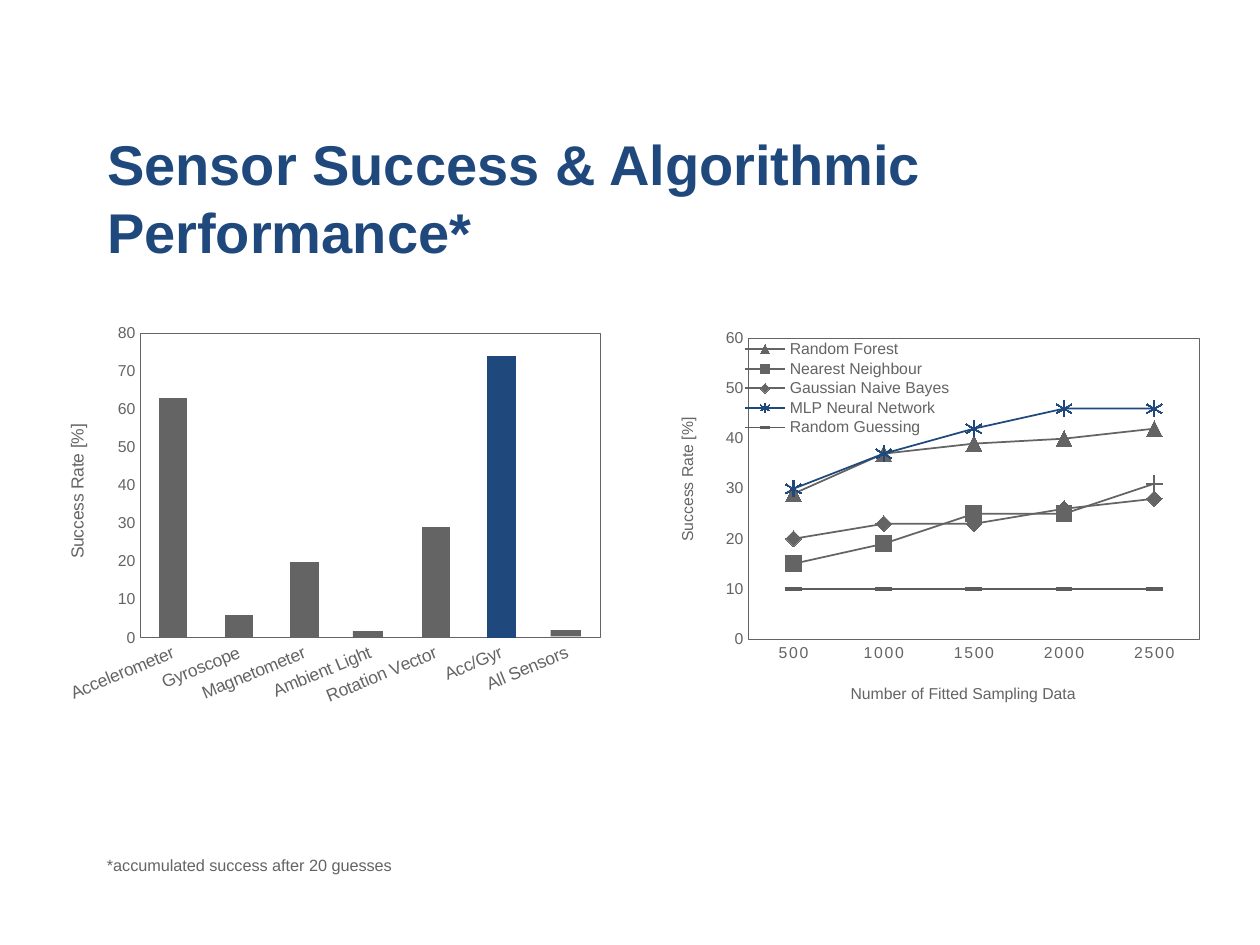
"""Build a slide comparing sensor success and algorithm performance in two charts."""
import pptx
import pptx.chart.data
import pptx.dml.color
import pptx.enum.chart
import pptx.enum.shapes
import pptx.enum.text
import pptx.oxml
import pptx.oxml.ns
import pptx.util

Inches, Pt = pptx.util.Inches, pptx.util.Pt
XL = pptx.enum.chart
MARKER = XL.XL_MARKER_STYLE
THEME = {"font": "Arial", "grey": "646464", "blue": "1F497D", "dark": "5C5C5C",
         "title": 32, "note": 16, "label": 10, "small": 9}

TITLE = "Sensor Success & Algorithmic Performance*"
NOTE = "*accumulated success after 20 guesses"
RATE = "Success Rate [%]"
SAMPLES = "Number of Fitted Sampling Data"

SENSORS = {"Accelerometer": 63, "Gyroscope": 6, "Magnetometer": 20, "Ambient Light": 0,
           "Rotation Vector": 29, "Acc/Gyr": 74, "All Sensors": 0}
BEST_SENSOR = "Acc/Gyr"
SAMPLE_SIZES = ["500", "1000", "1500", "2000", "2500"]
ALGORITHMS = [
    ("Random Forest", [29, 37, 39, 40, 42], "grey", MARKER.TRIANGLE),
    ("Nearest Neighbour", [15, 19, 25, 25, 31], "grey", MARKER.SQUARE),
    ("Gaussian Naive Bayes", [20, 23, 23, 26, 28], "grey", MARKER.DIAMOND),
    ("MLP Neural Network", [30, 37, 42, 46, 46], "blue", MARKER.STAR),
    ("Random Guessing", [10, 10, 10, 10, 10], "dark", MARKER.DASH),
]
SMALL_BARS = [(2.8, 5.01), (4.37, 5)]


def color(name):
    return pptx.dml.color.RGBColor.from_string(THEME[name])


def style(font, size, name="grey", bold=False):
    font.name, font.size, font.bold = THEME["font"], Pt(THEME[size]), bold
    font.color.rgb = color(name)


def fill(fmt, name):
    fmt.fill.solid()
    fmt.fill.fore_color.rgb = color(name)


def set_layout(parent, box, after=None, inner=False):
    for old in parent.xpath("./c:layout"):
        parent.remove(old)
    tags = ['<c:layoutTarget val="inner"/>'] if inner else []
    tags += [f'<c:{k}Mode val="edge"/>' for k in "xy"]
    tags += [f'<c:{k} val="{v}"/>' for k, v in zip("xywh", box)]
    layout = pptx.oxml.parse_xml(
        f'<c:layout {pptx.oxml.ns.nsdecls("c")}><c:manualLayout>'
        f'{"".join(tags)}</c:manualLayout></c:layout>')
    if after:
        parent.xpath(f"./c:{after}")[0].addnext(layout)
    else:
        parent.insert(0, layout)


def set_title(axis, text, size, place):
    title = axis.axis_title
    p = title.text_frame.paragraphs[0]
    p.text = text
    style(p.font, size)
    set_layout(title._element, place, "tx")


def add_chart(slide, kind, box, cats, series, plot, top, label_size):
    data = pptx.chart.data.CategoryChartData(number_format="0")
    data.categories = cats
    for name, values in series:
        data.add_series(name, values)
    chart = slide.shapes.add_chart(kind, *map(Inches, box), data).chart
    chart.has_title = chart.has_legend = False
    style(chart.font, "small")
    cat, val = chart.category_axis, chart.value_axis
    for axis, size in ((cat, label_size), (val, "small")):
        axis.major_tick_mark = axis.minor_tick_mark = XL.XL_TICK_MARK.NONE
        axis.has_major_gridlines = False
        axis.format.line.fill.background()
        style(axis.tick_labels.font, size)
    val.minimum_scale, val.maximum_scale, val.major_unit = 0, top, 10
    val.tick_labels.number_format = "0"
    val.tick_labels.number_format_is_linked = False
    area = chart._chartSpace.chart.plotArea
    set_layout(area, plot, inner=True)
    area.append(pptx.oxml.parse_xml(
        f'<c:spPr {pptx.oxml.ns.nsdecls("c", "a")}><a:noFill/><a:ln w="6350"><a:solidFill>'
        f'<a:srgbClr val="{THEME["grey"]}"/></a:solidFill></a:ln></c:spPr>'))
    return chart


def add_sensor_chart(slide):
    chart = add_chart(slide, XL.XL_CHART_TYPE.COLUMN_CLUSTERED, (0.1, 2.49, 4.72, 3.8),
                      list(SENSORS), [("Series 1", list(SENSORS.values()))],
                      (0.215, 0.041, 0.773, 0.636), 80, "label")
    plot = chart.plots[0]
    plot.gap_width, plot.overlap, plot.vary_by_categories = 133, -8, False
    bars = plot.series[0]
    fill(bars.format, "grey")
    fill(bars.points[list(SENSORS).index(BEST_SENSOR)].format, "blue")
    set_title(chart.value_axis, RATE, "label", (0.084, 0.224))
    chart.category_axis._element.xpath("./c:txPr/a:bodyPr")[0].set("rot", "-1350000")


def add_algorithm_chart(slide):
    chart = add_chart(slide, XL.XL_CHART_TYPE.LINE_MARKERS, (5.06, 2.61, 4.51, 3.21),
                      SAMPLE_SIZES, [a[:2] for a in ALGORITHMS],
                      (0.195, 0.024, 0.794, 0.743), 60, "small")
    chart.plots[0].vary_by_categories = False
    for line, (_, _, name, marker) in zip(chart.plots[0].series, ALGORITHMS):
        line.smooth = False
        line.format.line.width = Pt(1)
        line.format.line.color.rgb = color(name)
        line.marker.style, line.marker.size = marker, 9
        fill(line.marker.format, name)
        line.marker.format.line.fill.background()
    last = chart.plots[0].series[1].points[len(SAMPLE_SIZES) - 1]
    last.marker.style, last.marker.size = MARKER.PLUS, 9
    fill(last.marker.format, "grey")
    last.format.line.width = Pt(1)
    last.format.line.color.rgb = color("grey")
    set_title(chart.value_axis, RATE, "small", (0.064, 0.212))
    set_title(chart.category_axis, SAMPLES, "small", (0.37, 0.87))
    chart.category_axis._element.xpath("./c:txPr//a:defRPr")[0].set("spc", "100")
    chart.has_legend = True
    legend = chart.legend
    legend.position = XL.XL_LEGEND_POSITION.CORNER
    legend.include_in_layout = False
    style(legend.font, "small")
    set_layout(legend._element, (0.154, 0.025, 0.43, 0.245), "legendPos")


def main():
    prs = pptx.Presentation()
    prs.slide_width, prs.slide_height = Inches(10), Inches(7.5)
    slide = prs.slides.add_slide(prs.slide_layouts[5])

    title = slide.shapes.title
    title.left, title.top, title.width, title.height = map(Inches, (0.75, 0.94, 8.58, 1.25))
    tf = title.text_frame
    tf.text = TITLE
    tf.word_wrap = True
    tf.auto_size = pptx.enum.text.MSO_AUTO_SIZE.NONE
    tf.vertical_anchor = pptx.enum.text.MSO_ANCHOR.MIDDLE
    p = tf.paragraphs[0]
    p.alignment = pptx.enum.text.PP_ALIGN.LEFT
    style(p.font, "title", "blue", True)

    add_sensor_chart(slide)
    add_algorithm_chart(slide)

    note = slide.shapes.add_textbox(*map(Inches, (0.75, 6.59, 2.91, 0.28)))
    note.text_frame.word_wrap = True
    p = note.text_frame.paragraphs[0]
    r = p.add_run()
    r.text = NOTE
    style(r.font, "note")
    r.font._element.set("baseline", "-25000")

    for left, top in SMALL_BARS:
        sp = slide.shapes.add_shape(pptx.enum.shapes.MSO_SHAPE.RECTANGLE,
                                    *map(Inches, (left, top, 0.24, 0.05)))
        sp.shadow.inherit = False
        fill(sp, "grey")
        sp.line.fill.background()

    prs.save("out.pptx")


if __name__ == "__main__":
    main()
